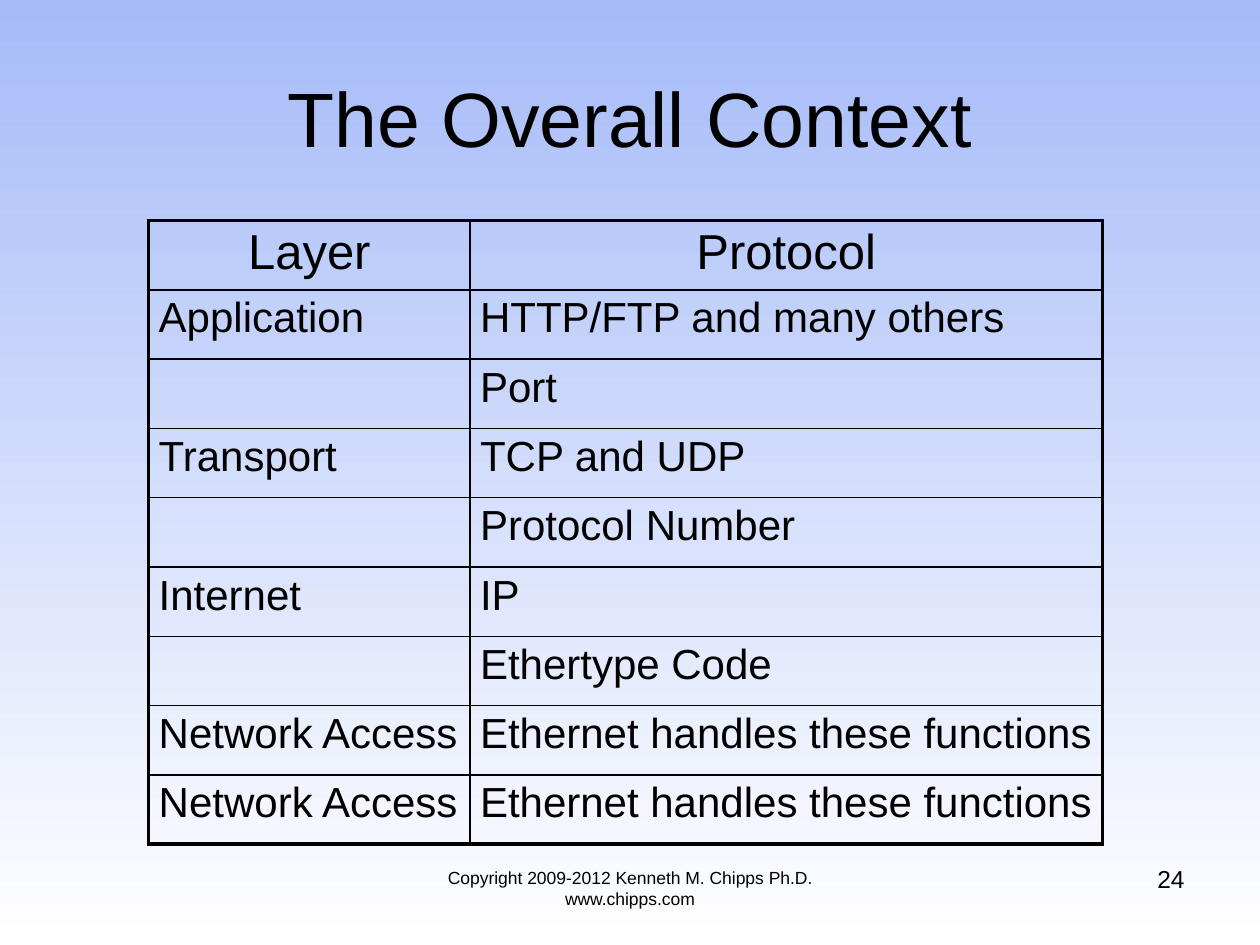
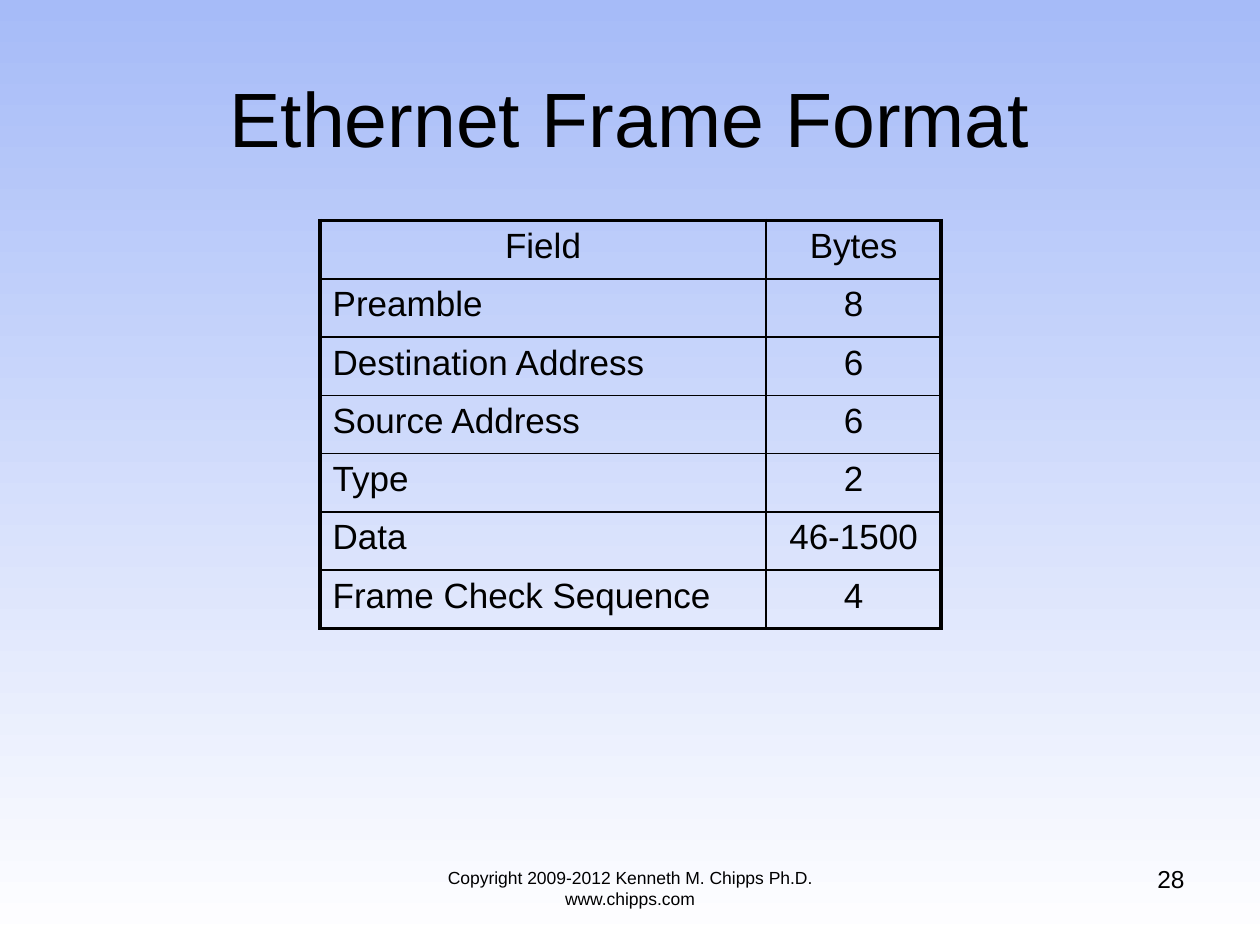
from lxml import etree
from pptx import Presentation
from pptx.dml.color import RGBColor
from pptx.enum import text
from pptx.oxml import ns
from pptx.util import Inches, Pt

SLIDES = [
    dict(
        title="The Overall Context", number="24",
        rows=[
            ("Layer", "Protocol"),
            ("Application", "HTTP/FTP and many others"),
            ("", "Port"),
            ("Transport", "TCP and UDP"),
            ("", "Protocol Number"),
            ("Internet", "IP"),
            ("", "Ethertype Code"),
            ("Network Access", "Ethernet handles these functions"),
            ("Network Access", "Ethernet handles these functions"),
        ],
        left=1.18, widths=(2.55, 5.02), height=4.95, margins=(0.08, 0.04),
        head_size=28, body_size=24, centred_columns=(),
    ),
    dict(
        title="Ethernet Frame Format", number="28",
        rows=[
            ("Field", "Bytes"),
            ("Preamble", "8"),
            ("Destination Address", "6"),
            ("Source Address", "6"),
            ("Type", "2"),
            ("Data", "46-1500"),
            ("Frame Check Sequence", "4"),
        ],
        left=2.54, widths=(3.54, 1.39), height=3.24, margins=(0.1, 0.05),
        head_size=20, body_size=20, centred_columns=(1,),
    ),
]
FOOTER = "Copyright 2009-2012 Kenneth M. Chipps Ph.D. www.chipps.com"

FONT = "Arial"
BLACK = RGBColor(0x00, 0x00, 0x00)
SKY = RGBColor(0xA6, 0xBB, 0xF8)
WHITE = RGBColor(0xFF, 0xFF, 0xFF)
TABLE_TOP = 1.75
OUTER, INNER = 2.25, 1
LEFT, CENTER, RIGHT = text.PP_ALIGN.LEFT, text.PP_ALIGN.CENTER, text.PP_ALIGN.RIGHT


def write(tf, content, size, align):
    tf.text = content
    p = tf.paragraphs[0]
    p.alignment = align
    for r in p.runs:
        r.font.name = FONT
        r.font.size = Pt(size)
        r.font.color.rgb = BLACK


def add_label(s, box, content, size, align):
    tf = s.shapes.add_textbox(*map(Inches, box)).text_frame
    tf.word_wrap = True
    write(tf, content, size, align)


def set_borders(cell, weights):
    tc_pr = cell._tc.get_or_add_tcPr()
    for side, weight in weights.items():
        ln = etree.SubElement(tc_pr, ns.qn(f"a:ln{side}"), w=str(Pt(weight)))
        fill = etree.SubElement(ln, ns.qn("a:solidFill"))
        etree.SubElement(fill, ns.qn("a:srgbClr"), val=str(BLACK))


def add_grid(s, spec_rows, left, widths, height, margins, head_size, body_size, centred_columns):
    last_row, last_col = len(spec_rows) - 1, len(widths) - 1
    table = s.shapes.add_table(
        len(spec_rows), len(widths), Inches(left), Inches(TABLE_TOP),
        Inches(sum(widths)), Inches(height)).table
    table.first_row = table.horz_banding = False
    for column, width in zip(table.columns, widths):
        column.width = Inches(width)
    for i, row in enumerate(spec_rows):
        for j, content in enumerate(row):
            cell = table.cell(i, j)
            cell.margin_left = cell.margin_right = Inches(margins[0])
            cell.margin_top = cell.margin_bottom = Inches(margins[1])
            edges = {"L": j == 0, "R": j == last_col, "T": i == 0, "B": i == last_row}
            set_borders(cell, {k: OUTER if edge else INNER for k, edge in edges.items()})
            cell.fill.background()
            centred = i == 0 or j in centred_columns
            write(cell.text_frame, content, body_size if i else head_size,
                  CENTER if centred else LEFT)


def set_background(master):
    fill = master.background.fill
    fill.gradient()
    fill.gradient_angle = 270
    for stop, colour, position in zip(fill.gradient_stops, (SKY, WHITE), (0, 1)):
        stop.color.rgb = colour
        stop.position = position


def add_slide(prs, title, number, rows, **grid):
    s = prs.slides.add_slide(prs.slide_layouts[5])
    add_label(s, (3, 6.83, 4, 0.52), FOOTER, 10, CENTER)
    add_label(s, (7.17, 6.81, 2.33, 0.52), number, 14, RIGHT)
    sp = s.shapes.title
    sp.left, sp.top, sp.width, sp.height = map(Inches, (0.5, 0.3, 9, 1.25))
    sp.text_frame.vertical_anchor = text.MSO_ANCHOR.MIDDLE
    write(sp.text_frame, title, 44, CENTER)
    add_grid(s, rows, **grid)


def main():
    prs = Presentation()
    prs.slide_width, prs.slide_height = Inches(10), Inches(7.5)
    set_background(prs.slide_master)
    for slide in SLIDES:
        add_slide(prs, **slide)
    prs.save("out.pptx")


if __name__ == "__main__":
    main()
